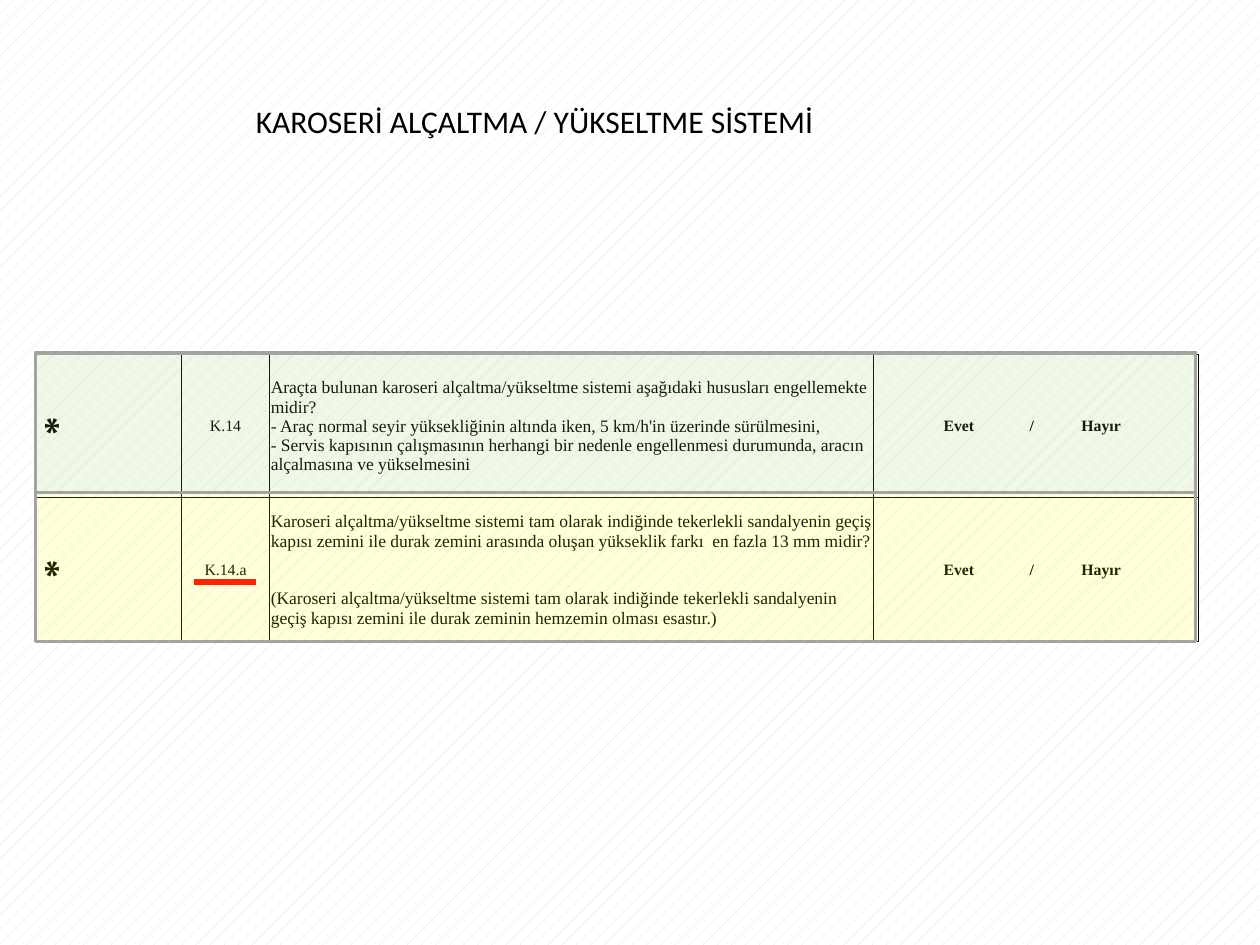
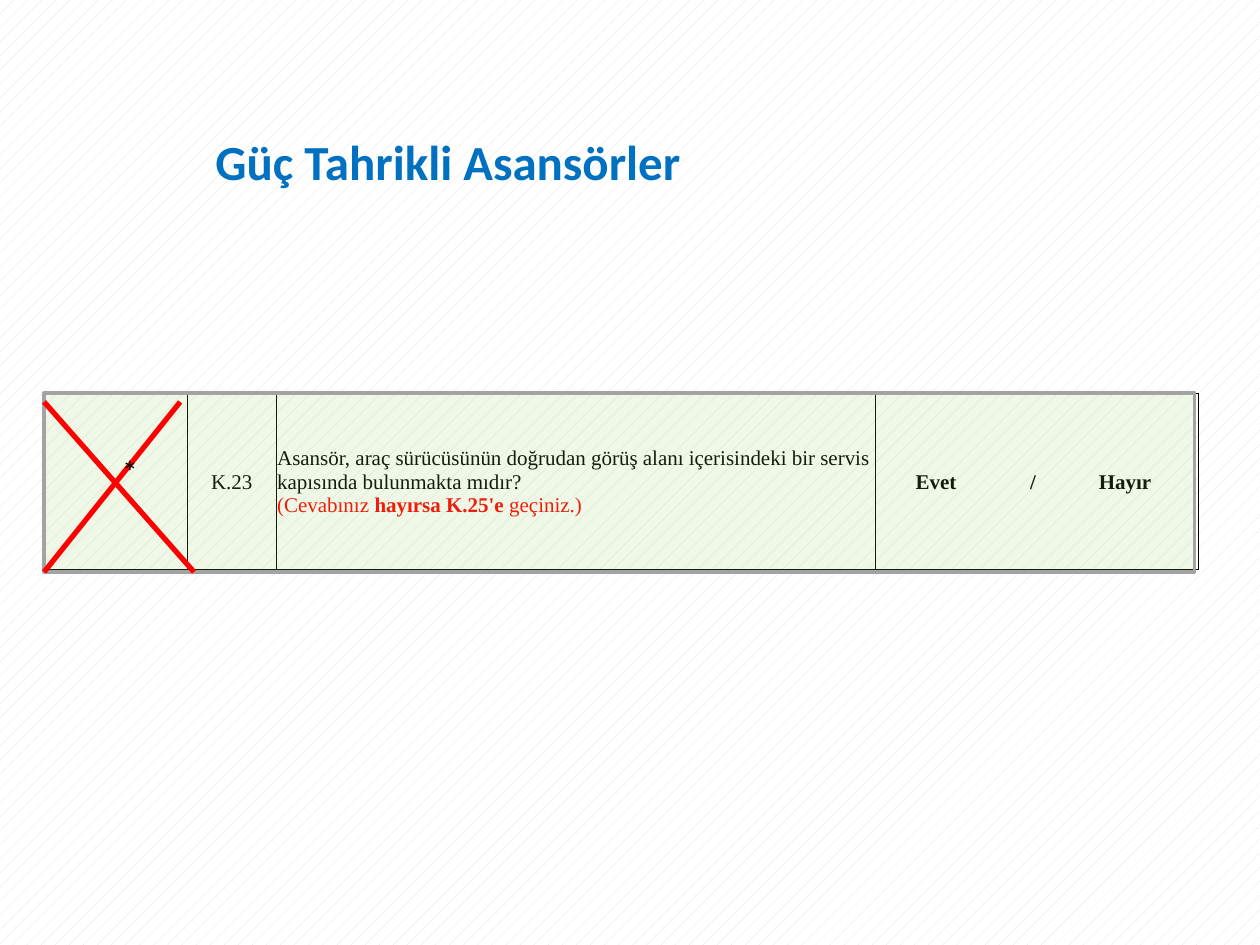
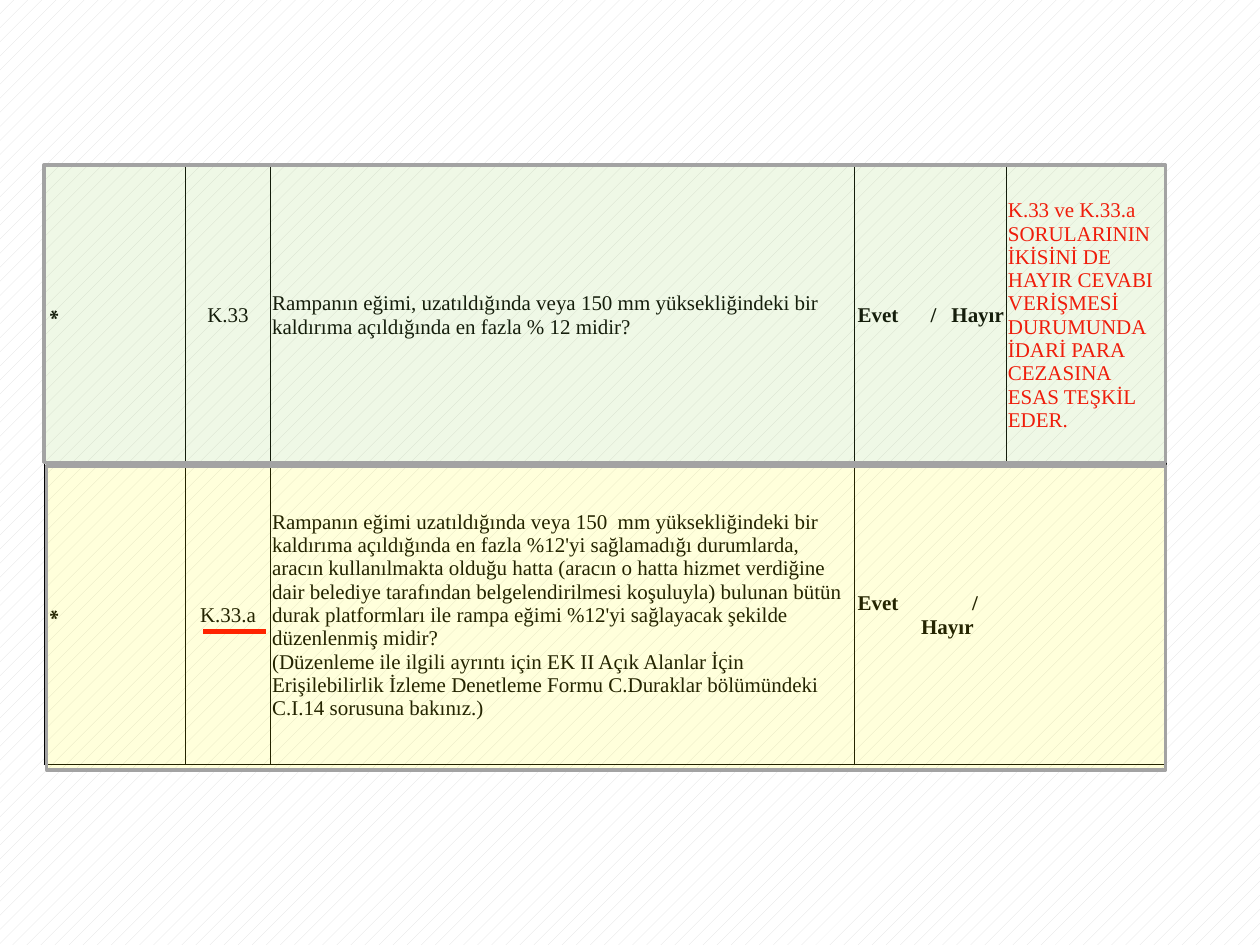
"""Builds three slides of accessibility checklist questions with tinted answer rows."""
from lxml import etree
from pptx import Presentation
from pptx.dml.color import RGBColor
from pptx.enum.dml import MSO_PATTERN
from pptx.enum.shapes import MSO_CONNECTOR, MSO_SHAPE
from pptx.enum.text import MSO_ANCHOR, MSO_AUTO_SIZE, PP_ALIGN
from pptx.oxml.ns import qn
from pptx.util import Emu, Inches, Pt

LEFT, CENTER = PP_ALIGN.LEFT, PP_ALIGN.CENTER
MIDDLE, TOP = MSO_ANCHOR.MIDDLE, MSO_ANCHOR.TOP
FIT = MSO_AUTO_SIZE.SHAPE_TO_FIT_TEXT
RECT, STRAIGHT = MSO_SHAPE.RECTANGLE, MSO_CONNECTOR.STRAIGHT
PATTERN = MSO_PATTERN.PERCENT_10
TITLE_ONLY, BLANK = 5, 6

COLORS = {"black": "000000", "white": "FFFFFF", "hatch": "E0E0E0", "blue": "0070C0",
          "red": "FF0000", "green": "92D050", "yellow": "FFFF00", "frame": "A3A3A3"}
HEAD_FONT, BODY_FONT = "Calibri", "Times New Roman"
TINT_ALPHA = 14
SIDES = "LRTB"

WIDE_ANSWER = [[("Evet", 0.67), ("/", 1.25), ("Hayır", 1.8)]]
LARGE_ANSWER = [[("Evet", 0.47), ("/", 1.24), ("Hayır", 1.97)]]
NARROW_ANSWER = [[("Evet", 0.18), ("/", 0.62), ("Hayır", 0.97)]]
SPLIT_ANSWER = [[("Evet", 0.18), ("/", 0.95)], [("Hayır", 0.73)]]

SLIDES = [
    {
        "title": {"text": "KAROSERİ ALÇALTMA / YÜKSELTME SİSTEMİ", "box": (1.93, 0.76, 4.67, 0.4),
                  "size": 18, "color": "black", "bold": False},
        "at": (0.28, 2.81), "cols": [1.16, 0.7, 4.79, 2.52, 0.04], "row_height": 1.14,
        "sizes": {"star": 21, "code": 9, "question": 10, "answer": 9},
        "rows": [
            {"star": "*", "code": "K.14", "answer": WIDE_ANSWER, "question": [(
                "Araçta bulunan karoseri alçaltma/yükseltme sistemi aşağıdaki hususları "
                "engellemekte midir? \n- Araç normal seyir yüksekliğinin altında iken, 5 km/h'in "
                "üzerinde sürülmesini,\n- Servis kapısının çalışmasının herhangi bir nedenle "
                "engellenmesi durumunda, aracın alçalmasına ve yükselmesini", "black", False)]},
            {"star": "*", "code": "K.14.a", "answer": WIDE_ANSWER, "question": [(
                "Karoseri alçaltma/yükseltme sistemi tam olarak indiğinde tekerlekli sandalyenin "
                "geçiş kapısı zemini ile durak zemini arasında oluşan yükseklik farkı  en fazla "
                "13 mm midir? \n(Karoseri alçaltma/yükseltme sistemi tam olarak indiğinde "
                "tekerlekli sandalyenin geçiş kapısı zemini ile durak zeminin hemzemin olması "
                "esastır.)", "black", False)]},
        ],
        "underlines": [(2.03, 4.62, 1.54, 4.62)],
        "tints": [("green", (0.28, 2.8, 9.21, 1.11)), ("yellow", (0.28, 3.91, 9.21, 1.18))],
    },
    {
        "title": {"text": "Güç Tahrikli Asansörler", "box": (1.61, 0.99, 3.94, 0.57),
                  "size": 28, "color": "blue", "bold": True},
        "at": (0.35, 3.12), "cols": [1.14, 0.7, 4.76, 2.5, 0.04], "row_height": 1.4,
        "sizes": {"code": 12, "question": 12, "answer": 12},
        "rows": [
            {"code": "K.23", "answer": LARGE_ANSWER, "question": [
                ("Asansör, araç sürücüsünün doğrudan görüş alanı içerisindeki bir servis "
                 "kapısında bulunmakta mıdır?\n", "black", False),
                ("(Cevabınız ", "red", False), ("hayırsa K.25'e", "red", True),
                (" geçiniz.)", "red", False)]},
        ],
        "tints": [("green", (0.35, 3.12, 9.13, 1.42))],
        "crosses": [(1.54, 4.54, 0.35, 3.19), (1.43, 3.19, 0.35, 4.54)],
        "mark": ("*", (0.87, 3.54, 0.31, 0.4), 18),
    },
    {
        "at": (0.35, 1.31), "cols": [1.12, 0.68, 4.63, 1.21, 1.27], "row_height": 2.38,
        "sizes": {"star": 12, "code": 12, "question": 12, "answer": 12, "note": 12},
        "rows": [
            {"star": "*", "code": "K.33", "answer": NARROW_ANSWER,
             "question": [("Rampanın eğimi, uzatıldığında veya 150 mm yüksekliğindeki bir "
                           "kaldırıma açıldığında en fazla % 12 midir?", "black", False)],
             "note": [("K.33 ve K.33.a SORULARININ İKİSİNİ DE HAYIR CEVABI VERİŞMESİ DURUMUNDA "
                       "İDARİ PARA CEZASINA ESAS TEŞKİL EDER.", "red", False)]},
            {"star": "*", "code": "K.33.a", "answer": SPLIT_ANSWER, "question": [(
                "Rampanın eğimi uzatıldığında veya 150  mm yüksekliğindeki bir kaldırıma "
                "açıldığında en fazla %12'yi sağlamadığı durumlarda, aracın kullanılmakta olduğu "
                "hatta (aracın o hatta hizmet verdiğine dair belediye tarafından "
                "belgelendirilmesi koşuluyla) bulunan bütün durak platformları ile rampa eğimi "
                "%12'yi sağlayacak şekilde düzenlenmiş midir?\n(Düzenleme ile ilgili ayrıntı için "
                "EK II Açık Alanlar İçin Erişilebilirlik İzleme Denetleme Formu C.Duraklar "
                "bölümündeki  C.I.14 sorusuna bakınız.)", "black", False)]},
        ],
        "underlines": [(2.11, 5.01, 1.61, 5.01)],
        "tints": [("green", (0.35, 1.31, 8.9, 2.36)), ("yellow", (0.37, 3.7, 8.88, 2.41))],
    },
]
FIELDS = ["star", "code", "question", "answer", "note"]


def rgb(name):
    return RGBColor.from_string(COLORS[name])


def inches(values):
    return [Inches(v) for v in values]


def add_run(p, text, size, color="black", bold=False, font=BODY_FONT):
    for i, line in enumerate(text.split("\n")):
        if i:
            p.add_line_break()
        if line:
            r = p.add_run()
            r.text = line
            r.font.name, r.font.size, r.font.bold = font, Pt(size), bold
            r.font.color.rgb = rgb(color)


def add_answer(tf, lines, size):
    for i, words in enumerate(lines):
        p = tf.add_paragraph() if i else tf.paragraphs[0]
        p.alignment = LEFT
        tabs = etree.SubElement(p._p.get_or_add_pPr(), qn("a:tabLst"))
        for word, center in words:
            etree.SubElement(tabs, qn("a:tab"), pos=str(Inches(center)), algn="ctr")
            add_run(p, "\t" + word, size, bold=True)


def set_borders(cell, hidden):
    tcPr = cell._tc.get_or_add_tcPr()
    for side in SIDES:
        ln = etree.SubElement(tcPr, qn("a:ln" + side), w=str(Pt(0.5)))
        if side == hidden:
            etree.SubElement(ln, qn("a:noFill"))
        else:
            fill = etree.SubElement(ln, qn("a:solidFill"))
            etree.SubElement(fill, qn("a:srgbClr"), val=COLORS["black"])
    cell.fill.background()


def fill_cell(cell, field, content, size):
    cell.vertical_anchor = MIDDLE
    cell.margin_left = cell.margin_top = cell.margin_right = Inches(0.01)
    cell.margin_bottom = 0
    if not content:
        return
    tf = cell.text_frame
    p = tf.paragraphs[0]
    if field == "answer":
        add_answer(tf, content, size)
    elif field in ("star", "code"):
        p.alignment = CENTER
        add_run(p, content, size, bold=field == "star")
        if field == "star":
            cell._tc.get_or_add_tcPr().set("vert", "vert270")
    else:
        for text, color, bold in content:
            add_run(p, text, size, color, bold)


def add_questions(s, data):
    cols, rows, height = data["cols"], data["rows"], data["row_height"]
    x, y, w, h = inches((*data["at"], sum(cols), height * len(rows)))
    table = s.shapes.add_table(len(rows), len(cols), x, y, w, h).table
    table.first_row = table.horz_banding = False
    for column, width in zip(table.columns, cols):
        column.width = Inches(width)
    for i, row in enumerate(rows):
        table.rows[i].height = Inches(height)
        open_side = {} if "note" in row else {"answer": "R", "note": "L"}
        for j, field in enumerate(FIELDS):
            cell = table.cell(i, j)
            fill_cell(cell, field, row.get(field), data["sizes"].get(field))
            set_borders(cell, open_side.get(field))


def add_line(s, ends):
    line = s.shapes.add_connector(STRAIGHT, *inches(ends))
    line.line.color.rgb, line.line.width = rgb("red"), Pt(3)
    etree.SubElement(line._element.spPr, qn("a:effectLst"))


def add_tint(s, color, box):
    sp = s.shapes.add_shape(RECT, *inches(box))
    sp.shadow.inherit = False
    sp.fill.solid()
    sp.fill.fore_color.rgb = rgb(color)
    clr = sp._element.spPr.find(".//" + qn("a:srgbClr"))
    etree.SubElement(clr, qn("a:alpha"), val=str(TINT_ALPHA * 1000))
    sp.line.color.rgb, sp.line.width = rgb("frame"), Pt(2)


def add_title(s, title):
    sp = s.shapes.title
    sp.left, sp.top, sp.width, sp.height = inches(title["box"])
    tf = sp.text_frame
    tf.word_wrap, tf.auto_size, tf.vertical_anchor = False, FIT, TOP
    p = tf.paragraphs[0]
    p.alignment = LEFT
    add_run(p, title["text"], title["size"], title["color"], title["bold"], HEAD_FONT)


def add_mark(s, text, box, size):
    tf = s.shapes.add_textbox(*inches(box)).text_frame
    tf.word_wrap, tf.auto_size = True, FIT
    add_run(tf.paragraphs[0], text, size, font=HEAD_FONT)


def build_slide(prs, data):
    s = prs.slides.add_slide(prs.slide_layouts[TITLE_ONLY if "title" in data else BLANK])
    if "title" in data:
        add_title(s, data["title"])
    add_questions(s, data)
    for ends in data.get("underlines", []):
        add_line(s, ends)
    for color, box in data["tints"]:
        add_tint(s, color, box)
    for ends in data.get("crosses", []):
        add_line(s, ends)
    if "mark" in data:
        add_mark(s, *data["mark"])


def main():
    prs = Presentation()
    prs.slide_width, prs.slide_height = Emu(Inches(10)), Emu(Inches(7.5))
    fill = prs.slide_master.background.fill
    fill.patterned()
    fill.pattern = PATTERN
    fill.fore_color.rgb, fill.back_color.rgb = rgb("hatch"), rgb("white")
    for data in SLIDES:
        build_slide(prs, data)
    prs.save("out.pptx")


if __name__ == "__main__":
    main()
